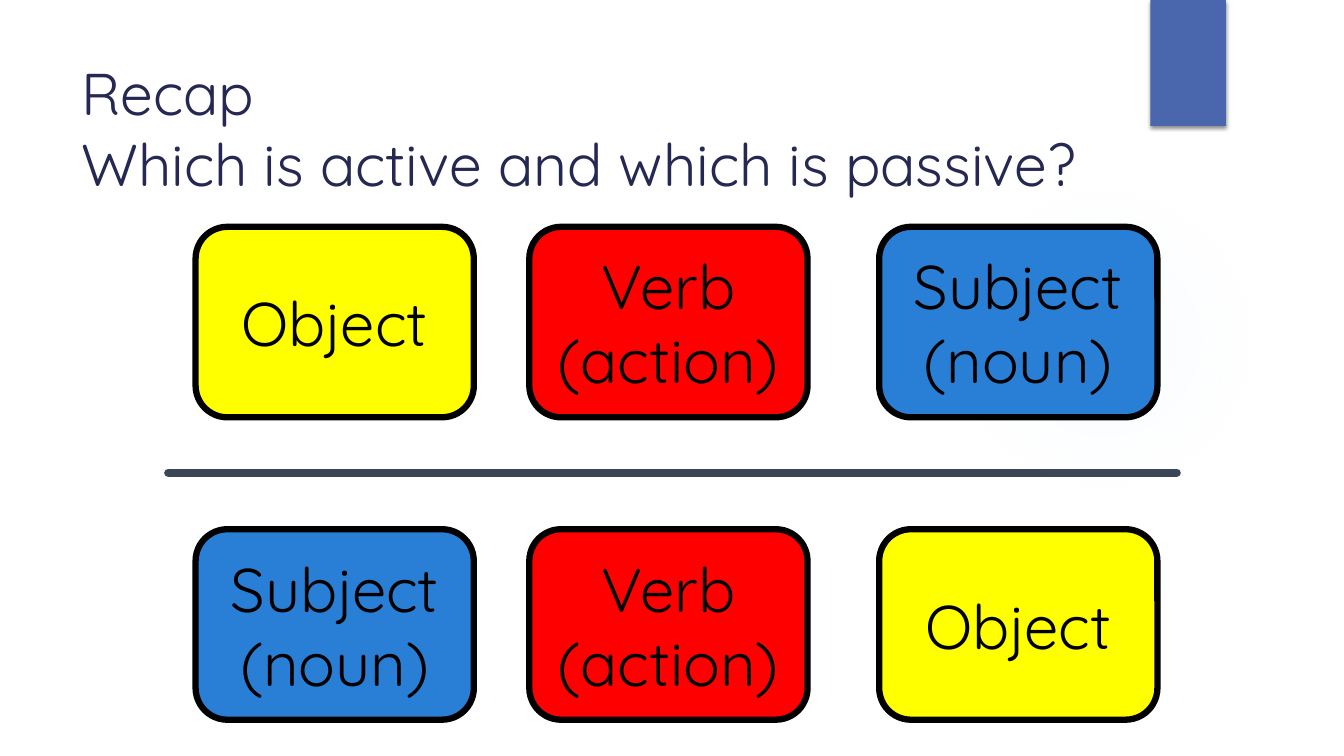
from pptx import Presentation
from pptx import util as u
from pptx.dml.color import RGBColor
from pptx.enum import shapes, text
from pptx.oxml import parse_xml
from pptx.oxml.ns import nsdecls, qn

PX = 9144
FONT = "Quicksand"
COLORS = {
    "glow": "CDE0FB", "tab": "4A66AC", "title": "242852", "rule": "3B4759",
    "Subject (noun)": "297FD5", "Verb (action)": "FF0000", "Object": "FFFF00",
    "black": "000000",
}


def color(name):
    """Return the named colour."""
    return RGBColor.from_string(COLORS[name])


def add_shape(s, kind, box, fill):
    """Add a filled preset shape without shadow or outline."""
    sp = s.shapes.add_shape(kind, *(v * PX for v in box))
    sp.shadow.inherit = False
    sp.fill.solid()
    sp.fill.fore_color.rgb = color(fill)
    sp.line.fill.background()
    return sp


def style_runs(p, size, name):
    """Set font, size and colour on every run of a paragraph."""
    for r in p.runs:
        r.font.name = FONT
        r.font.size = u.Pt(size)
        r.font.color.rgb = color(name)


def add_backdrop(s, glow_box, tab_box):
    """Add the faint round glow and the shadowed tab at the top."""
    glow = add_shape(s, shapes.MSO_SHAPE.OVAL, glow_box, "glow")
    stops = "".join(
        f'<a:gs pos="{pos * 1000}"><a:srgbClr val="{COLORS["glow"]}">'
        f'<a:alpha val="{alpha * 1000}"/></a:srgbClr></a:gs>'
        for pos, alpha in ((0, 7), (36, 6), (69, 0), (100, 0)))
    grad = parse_xml(
        f'<a:gradFill {nsdecls("a")}><a:gsLst>{stops}</a:gsLst><a:path path="circle">'
        '<a:fillToRect l="50000" t="50000" r="50000" b="50000"/></a:path></a:gradFill>')
    solid = glow._element.spPr.find(qn("a:solidFill"))
    solid.getparent().replace(solid, grad)

    tab = add_shape(s, shapes.MSO_SHAPE.RECTANGLE, tab_box, "tab")
    tab._element.spPr.find(qn("a:effectLst")).append(parse_xml(
        f'<a:outerShdw {nsdecls("a")} blurRad="38100" dist="25400" dir="5400000" '
        f'rotWithShape="0"><a:srgbClr val="{COLORS["black"]}">'
        '<a:alpha val="45000"/></a:srgbClr></a:outerShdw>'))


def add_title(s, box, wording):
    """Add the slide title."""
    tf = s.shapes.add_textbox(*(v * PX for v in box)).text_frame
    tf.word_wrap = True
    tf.vertical_anchor = text.MSO_ANCHOR.MIDDLE
    p = tf.paragraphs[0]
    p.text = wording
    style_runs(p, 42, "title")


def add_sentence(s, top, parts):
    """Add a row of three sentence-part cards."""
    for left, part in zip((194, 525, 872), parts):
        sp = add_shape(s, shapes.MSO_SHAPE.ROUNDED_RECTANGLE, (left, top, 276, 189), part)
        sp.line.color.rgb = color("black")
        sp.line.width = u.Pt(4.5)
        tf = sp.text_frame
        tf.word_wrap = True
        tf.vertical_anchor = text.MSO_ANCHOR.MIDDLE
        p = tf.paragraphs[0]
        p.text = part
        p.alignment = text.PP_ALIGN.CENTER
        style_runs(p, 44, "black")


def add_rule(s, left, top, width):
    """Add the round-ended line between the two sentences."""
    ln = s.shapes.add_connector(
        shapes.MSO_CONNECTOR.STRAIGHT, left * PX, top * PX, (left + width) * PX, top * PX)
    ln.line.color.rgb = color("rule")
    ln.line.width = u.Pt(6)
    ln.line._ln.set("cap", "rnd")
    ln._element.spPr.append(parse_xml(f'<a:effectLst {nsdecls("a")}/>'))


def main():
    """Build and save the slide."""
    prs = Presentation()
    prs.slide_width, prs.slide_height = u.Inches(13.33), u.Inches(7.5)
    s = prs.slides.add_slide(prs.slide_layouts[6])
    add_backdrop(s, (941, 183, 308, 308), (1141, 0, 75, 125))
    add_title(s, (71, 50, 1076, 153), "Recap\vWhich is active and which is passive?")
    add_sentence(s, 225, ("Object", "Verb (action)", "Subject (noun)"))
    add_sentence(s, 525, ("Subject (noun)", "Verb (action)", "Object"))
    add_rule(s, 167, 469, 1000)
    prs.save("out.pptx")


if __name__ == "__main__":
    main()
